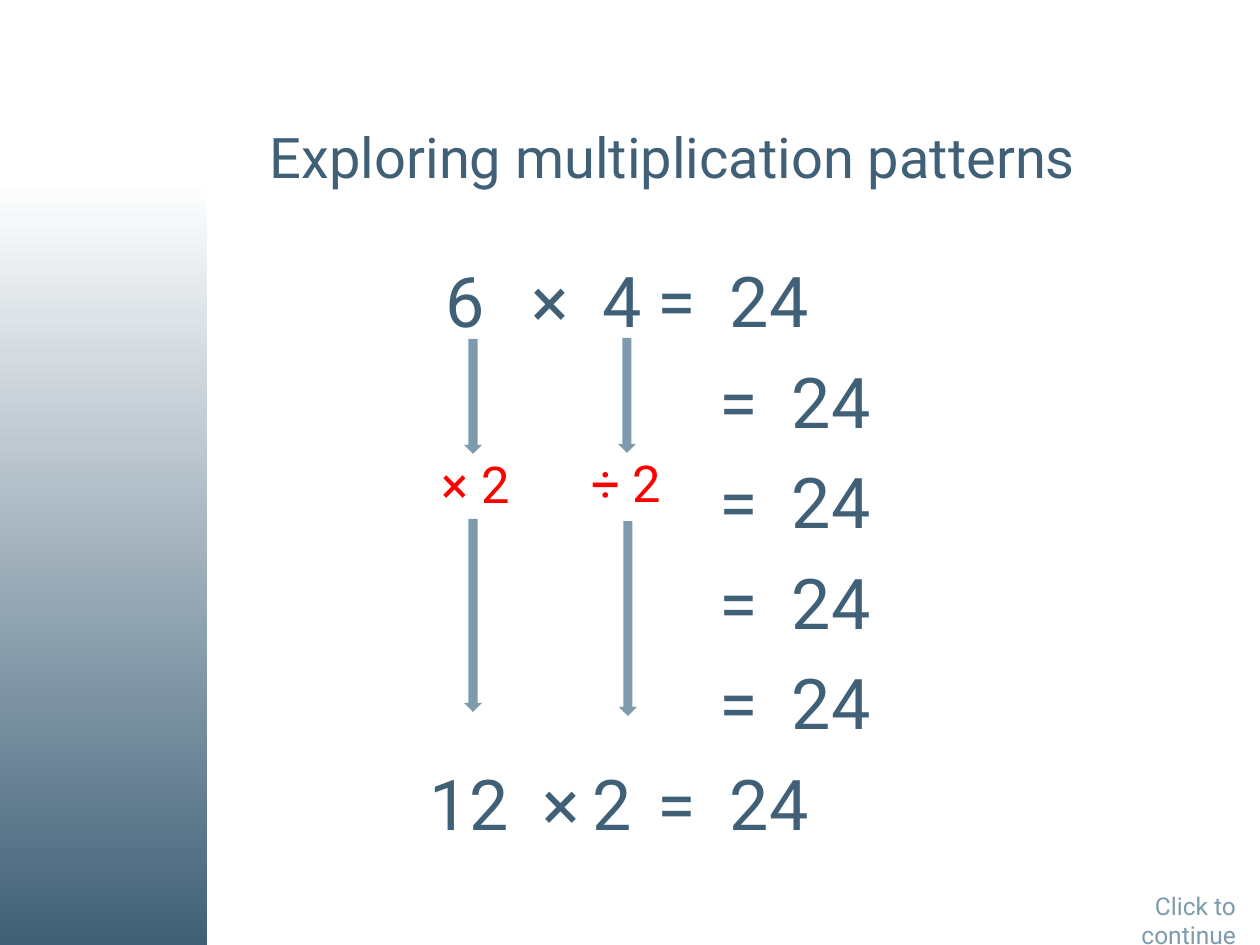
from lxml.etree import SubElement
from pptx import Presentation
from pptx.dml.color import RGBColor
from pptx.enum.shapes import MSO_SHAPE as Kind
from pptx.enum.text import MSO_ANCHOR as Anchor, PP_ALIGN as Align
from pptx.oxml.ns import qn
from pptx.util import Emu, Pt

SCALE = 914400 / 126
NAVY, STEEL, RED, WHITE = "406077", "7D9BAD", "FF0000", "FFFFFF"


def px(num):
    return Emu(round(num * SCALE))


def color(code):
    return RGBColor.from_string(code)


def write(para, text, size=40, tone=NAVY, font="Roboto", align=Align.LEFT, gap=0, stops=()):
    para.alignment = align
    para.space_before = Pt(gap)
    if stops:
        tabs = SubElement(para._p.get_or_add_pPr(), qn("a:tabLst"))
        for stop in stops:
            SubElement(tabs, qn("a:tab"), pos=str(px(stop)), algn="l")
    run = para.add_run()
    run.text = text
    run.font.size = Pt(size)
    run.font.name = font
    run.font.color.rgb = color(tone)


class Deck:
    def __init__(self, wide, high):
        self.show = Presentation()
        self.show.slide_width, self.show.slide_height = px(wide), px(high)
        self.slide = self.show.slides.add_slide(self.show.slide_layouts[6])

    def shape(self, kind, *place):
        item = self.slide.shapes.add_shape(kind, *map(px, place))
        item.shadow.inherit = False
        item.line.fill.background()
        return item

    def fade(self, *place):
        fill = self.shape(Kind.RECTANGLE, *place).fill
        fill.gradient()
        fill.gradient_angle = 90
        for stop, spot, tone in zip(fill.gradient_stops, (0, 0.81), (NAVY, WHITE)):
            stop.position = spot
            stop.color.rgb = color(tone)

    def arrow(self, left, top, high):
        fill = self.shape(Kind.DOWN_ARROW, left, top, 18, high).fill
        fill.solid()
        fill.fore_color.rgb = color(STEEL)

    def frame(self, *place, anchor=Anchor.TOP):
        frame = self.slide.shapes.add_textbox(*map(px, place)).text_frame
        frame.margin_left = frame.margin_right = 0
        frame.margin_top = frame.margin_bottom = 0
        frame.word_wrap = True
        frame.vertical_anchor = anchor
        return frame

    def text(self, text, *place, anchor=Anchor.TOP, **style):
        write(self.frame(*place, anchor=anchor).paragraphs[0], text, **style)

    def sums(self, rows, *place):
        frame = self.frame(*place)
        for num, (text, stops) in enumerate(rows):
            para = frame.add_paragraph() if num else frame.paragraphs[0]
            write(para, text, stops=stops, gap=9.4 if num else 0)


def main():
    deck = Deck(1260, 945)
    deck.fade(0, 0, 207, 945)
    deck.text("Exploring multiplication patterns", 270, 106, 980, 101,
              size=32, anchor=Anchor.MIDDLE)
    first = ("\t6\t×\t4\t=\t24", (16, 102, 173, 228, 300))
    inner = ("\t=\t24", (290, 362))
    last = ("12\t×\t2\t=\t24", (113, 163, 228, 300))
    deck.sums([first, *[inner] * 4, last], 430, 258, 820, 600)
    deck.text("Click to continue", 1126, 891, 110, 58,
              size=14, tone=STEEL, align=Align.RIGHT)
    for left, top, high in ((464, 339, 115), (464, 519, 193),
                            (618, 338, 115), (619, 521, 195)):
        deck.arrow(left, top, high)
    for label, left, top in (("× 2", 442, 453), ("÷ 2", 591, 452)):
        deck.text(label, left, top, 120, 62, size=29, tone=RED)
    deck.show.save("out.pptx")


if __name__ == "__main__":
    main()
